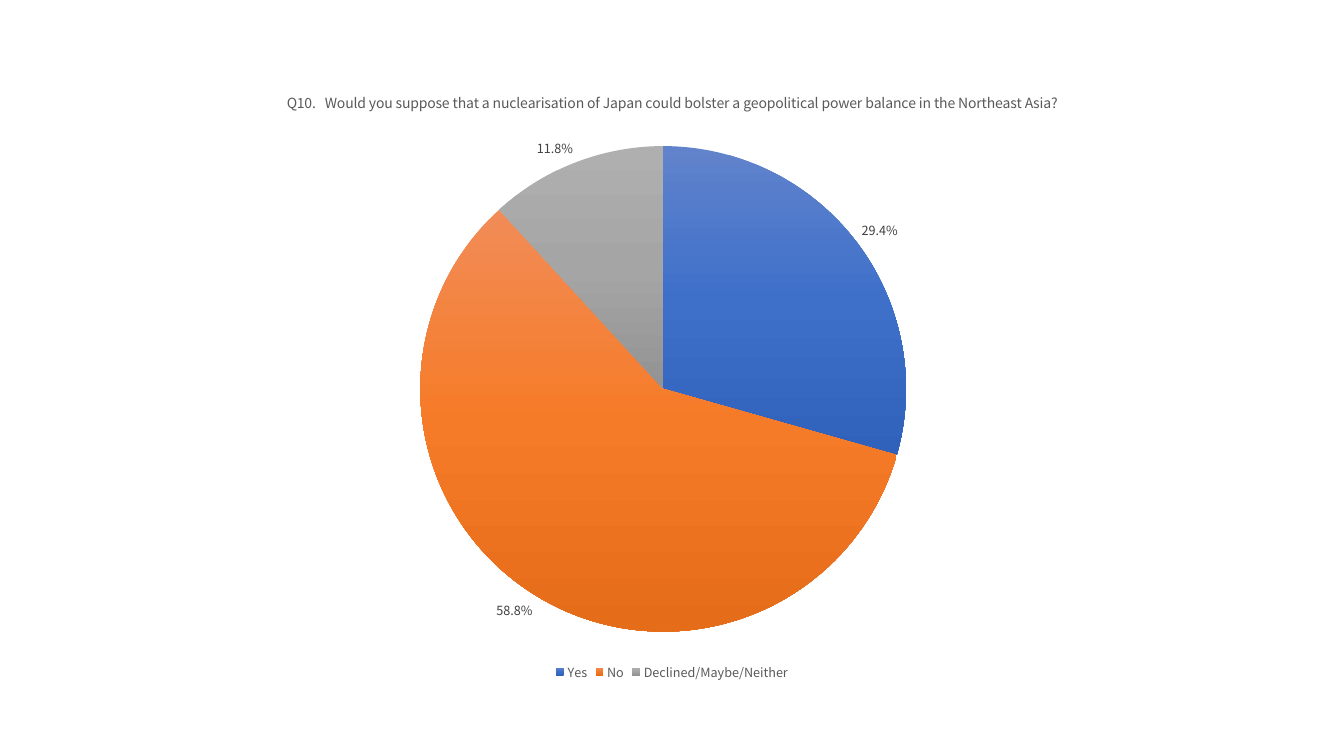
import copy

import pptx
import pptx.chart.data
import pptx.dml.color
import pptx.enum.chart
import pptx.util
from pptx.util import Inches

FONT = "Noto Sans CJK KR"
QUESTION = ("Q10.   Would you suppose that a nuclearisation of Japan could bolster "
            "a geopolitical power balance in the Northeast Asia?")
# answer, share, gradient from top to bottom
ANSWERS = [
    ("Yes", 0.294, ("6183CB", "3E70CA", "3062BB")),
    ("No", 0.588, ("F18C57", "F67B28", "E56C19")),
    ("Declined/Maybe/Neither", 0.118, ("AFAFAF", "A5A5A5", "939393")),
]


def rgb(value):
    return pptx.dml.color.RGBColor.from_string(value)


def style(font, size, color):
    font.name = FONT
    font.size = pptx.util.Pt(size)
    font.bold = False
    font.color.rgb = rgb(color)


def fill_gradient(fill, colors):
    """Fill from top to bottom with three evenly spaced colours."""
    fill.gradient()
    fill.gradient_angle = 270
    first = fill.gradient_stops[0]._gs
    first.addnext(copy.deepcopy(first))
    for i, (stop, color) in enumerate(zip(fill.gradient_stops, colors)):
        stop.position = i / 2
        stop.color.rgb = rgb(color)


def add_answer_pie(slide):
    data = pptx.chart.data.CategoryChartData(number_format="0.0%")
    data.categories = [name for name, _, _ in ANSWERS]
    data.add_series(QUESTION, [share for _, share, _ in ANSWERS])
    chart = slide.shapes.add_chart(
        pptx.enum.chart.XL_CHART_TYPE.PIE,
        Inches(0.7), Inches(0.7), Inches(11.93), Inches(6.09), data).chart
    style(chart.font, 10, "000000")

    chart.has_title = True
    chart.chart_title.include_in_layout = False
    p = chart.chart_title.text_frame.paragraphs[0]
    p.text = QUESTION
    style(p.font, 10, "595959")

    chart.has_legend = True
    chart.legend.position = pptx.enum.chart.XL_LEGEND_POSITION.BOTTOM
    chart.legend.include_in_layout = False
    style(chart.legend.font, 9, "595959")

    plot = chart.plots[0]
    plot.vary_by_categories = True
    series = plot.series[0]
    for i, (_, _, colors) in enumerate(ANSWERS):
        fill_gradient(series.points[i].format.fill, colors)

    labels = series.data_labels
    labels.show_value = True
    labels.number_format = "0.0%"
    labels.number_format_is_linked = False
    labels.position = pptx.enum.chart.XL_LABEL_POSITION.OUTSIDE_END
    style(labels.font, 9, "404040")


def main():
    prs = pptx.Presentation()
    prs.slide_width = Inches(13.33)
    prs.slide_height = Inches(7.5)
    add_answer_pie(prs.slides.add_slide(prs.slide_layouts[6]))
    prs.save("out.pptx")


if __name__ == "__main__":
    main()
